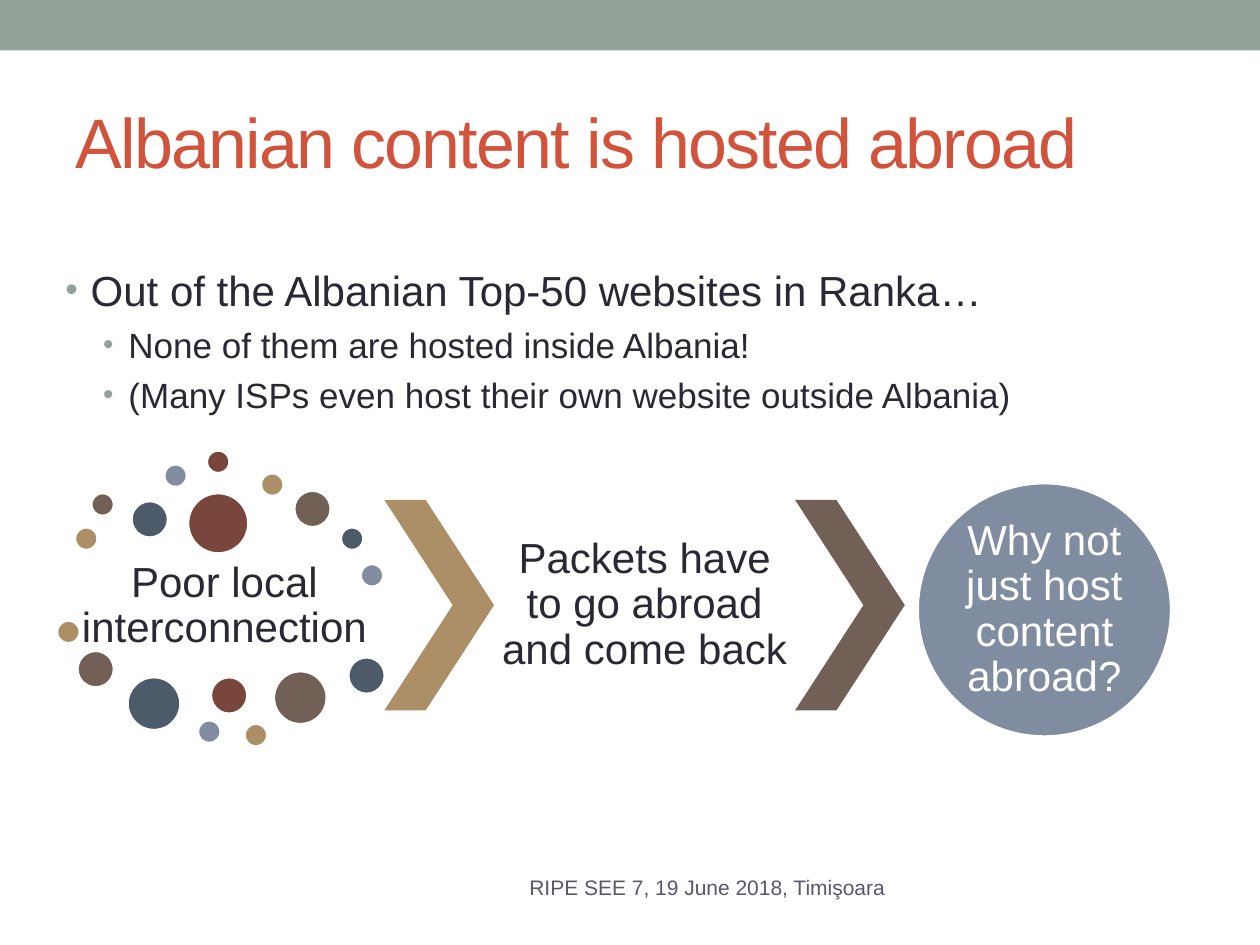
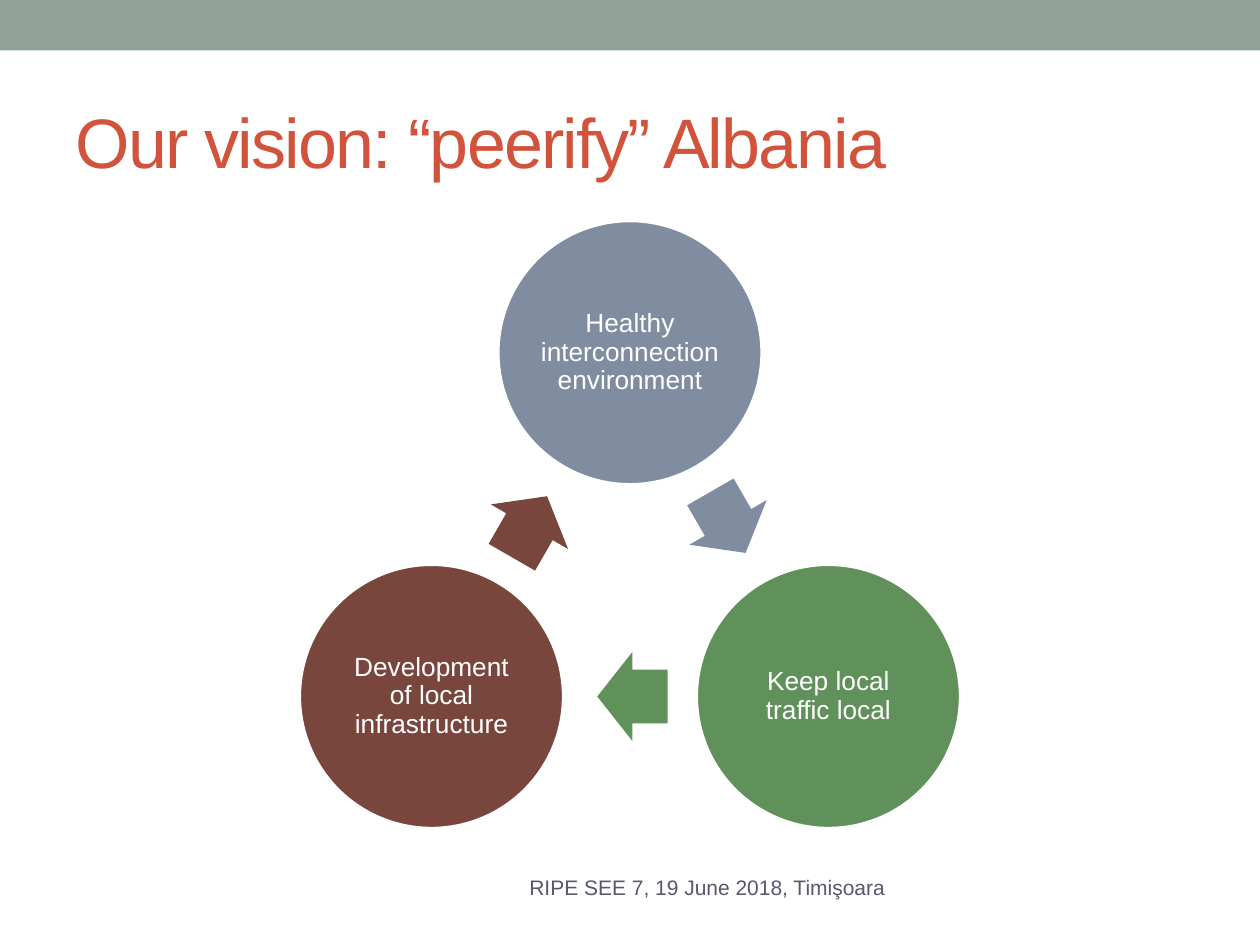
from itertools import cycle
from math import cos, radians, sin

from lxml import etree
from pptx import Presentation
from pptx.dml.color import RGBColor
from pptx.enum.shapes import MSO_SHAPE
from pptx.enum.text import MSO_ANCHOR, PP_ALIGN
from pptx.oxml.ns import qn
from pptx.util import Cm, Pt

RECT, OVAL = MSO_SHAPE.RECTANGLE, MSO_SHAPE.OVAL
CHEVRON, ARROW = MSO_SHAPE.CHEVRON, MSO_SHAPE.RIGHT_ARROW
LEFT, CENTER = PP_ALIGN.LEFT, PP_ALIGN.CENTER
TOP, MIDDLE = MSO_ANCHOR.TOP, MSO_ANCHOR.MIDDLE

FONT = "Arial"
SAGE, RED, INK, MUTED, WHITE = "93A299", "D2533C", "292934", "57576E", "FFFFFF"
TAN, BROWN, SLATE, STEEL, MAROON = "AD8F67", "726056", "4C5A6A", "808DA0", "79463D"
GREEN = "61915A"
SLIDE_W, SLIDE_H = 25.4, 19.05
TITLE_BOX = (1.27, 1.47, 22.86, 2.74)
FOOTER_BOX = (10.16, 17.5, 8.2, 0.91)

SMALL, MEDIUM, LARGE, LARGEST = 0.48, 0.76, 1.09, 1.24
DOTS = [
    (0.36, 1.55, SMALL), (0.69, 0.86, SMALL), (1.5, 1.02, MEDIUM),
    (2.16, 0.28, SMALL), (3.02, 0, SMALL), (4.11, 0.46, SMALL),
    (4.78, 0.81, MEDIUM), (5.72, 1.55, SMALL), (6.12, 2.29, SMALL),
    (2.64, 0.86, LARGEST), (0, 3.43, SMALL), (0.41, 4.04, MEDIUM),
    (1.42, 4.57, LARGE), (2.84, 5.44, SMALL), (3.1, 4.57, MEDIUM),
    (3.78, 5.51, SMALL), (4.37, 4.45, LARGE), (5.87, 4.17, MEDIUM),
]


def colour(value):
    """Turn a hex string into a colour."""
    return RGBColor.from_string(value)


def format_text(paragraph, text, size=24, ink=INK, align=LEFT, line=None, before=0, tracking=None):
    """Write formatted text into a paragraph."""
    paragraph.alignment = align
    paragraph.space_before = Pt(before)
    if line:
        paragraph.line_spacing = line
    run = paragraph.add_run()
    run.text = text
    run.font.name, run.font.size = FONT, Pt(size)
    run.font.color.rgb = colour(ink)
    if tracking:
        run.font._element.set("spc", str(tracking * 100))


def prepare_frame(frame, inset, anchor):
    """Make a text frame wrap, with equal insets."""
    frame.word_wrap = True
    frame.vertical_anchor = anchor
    frame.margin_left = frame.margin_right = Cm(inset)
    frame.margin_top = frame.margin_bottom = Cm(inset)


def add_text(slide, box, text, inset=0.08, anchor=MIDDLE, **style):
    """Add a text box holding one paragraph."""
    frame = slide.shapes.add_textbox(*map(Cm, box)).text_frame
    prepare_frame(frame, inset, anchor)
    format_text(frame.paragraphs[0], text, **style)


def add_figure(slide, kind, box, fill, outline=None, adjust=(), turn=0):
    """Add a flat preset shape."""
    figure = slide.shapes.add_shape(kind, *map(Cm, box))
    figure.shadow.inherit = False
    figure.fill.solid()
    figure.fill.fore_color.rgb = colour(fill)
    if outline:
        figure.line.color.rgb = colour(outline)
        figure.line.width = Pt(2.08)
    else:
        figure.line.fill.background()
    for index, value in enumerate(adjust):
        figure.adjustments[index] = value
    figure.rotation = turn
    return figure


def add_circle(slide, left, top, diameter, fill, text="", size=24, inset=0):
    """Add a white-rimmed circle, with a label if given."""
    circle = add_figure(slide, OVAL, (left, top, diameter, diameter), fill, outline=WHITE)
    if text:
        prepare_frame(circle.text_frame, inset, MIDDLE)
        format_text(circle.text_frame.paragraphs[0], text, size=size, ink=WHITE, align=CENTER, line=0.9)


def add_bullets(slide, box, items):
    """Add a bulleted list of (level, size, text) items."""
    frame = slide.shapes.add_textbox(*map(Cm, box)).text_frame
    prepare_frame(frame, 0.25, TOP)
    for index, (level, size, text) in enumerate(items):
        paragraph = frame.add_paragraph() if index else frame.paragraphs[0]
        paragraph.level = level
        properties = paragraph._p.get_or_add_pPr()
        properties.set("marL", str(Cm(0.51 + 0.76 * level)))
        properties.set("indent", str(Cm(-0.51)))
        bullet_colour = etree.SubElement(properties, qn("a:buClr"))
        etree.SubElement(bullet_colour, qn("a:srgbClr"), val=SAGE)
        etree.SubElement(properties, qn("a:buSzPct"), val="85000")
        etree.SubElement(properties, qn("a:buFont"), typeface=FONT)
        etree.SubElement(properties, qn("a:buChar"), char="•")
        format_text(paragraph, text, size=size, before=4.8 if index else 0)


def add_slide(deck, title):
    """Add a slide with the shared band, footer and title."""
    slide = deck.slides.add_slide(deck.slide_layouts[5])
    add_figure(slide, RECT, (0, 0, SLIDE_W, 1.02), SAGE)
    add_text(slide, FOOTER_BOX, "RIPE SEE 7, 19 June 2018, Timişoara",
             inset=0.13, anchor=TOP, size=12, ink=MUTED, align=CENTER)
    heading = slide.shapes.title
    heading.left, heading.top, heading.width, heading.height = map(Cm, TITLE_BOX)
    prepare_frame(heading.text_frame, 0.25, MIDDLE)
    format_text(heading.text_frame.paragraphs[0], title, size=40, ink=RED, tracking=-1)
    return slide


def add_dot_cluster(slide, left, top, text):
    """Draw a label surrounded by dots."""
    add_text(slide, (left + 0.36, top + 2.16, 6.05, 1.98), text, align=CENTER, line=0.9)
    for (x, y, diameter), fill in zip(DOTS, cycle([TAN, BROWN, SLATE, STEEL, MAROON])):
        add_circle(slide, left + x, top + y, diameter, fill)


def add_flow(slide, left, top, cause, effect, question):
    """Draw the flow from the dot cluster to the closing question."""
    add_dot_cluster(slide, left, top, cause)
    chevron_w, chevron_h, step = 2.21, 4.24, 8.28
    first, row = left + 6.61, top + 1.01
    for index, fill in enumerate([TAN, BROWN]):
        add_figure(slide, CHEVRON, (first + index * step, row, chevron_w, chevron_h), fill, adjust=[0.623])
    add_text(slide, (first + chevron_w, row, step - chevron_w, chevron_h), effect, align=CENTER, line=0.9)
    add_circle(slide, left + 17.35, top + 0.66, 5.13, STEEL, question)


def add_cycle(slide, centre_x, centre_y, radius, stages):
    """Draw stages clockwise on a ring, with an arrow after each."""
    diameter, arrow_w, arrow_h, setback = 5.33, 1.42, 1.8, 0.05
    turn_step = 360 / len(stages)
    midway = radius * cos(radians(turn_step / 2))
    for index, (text, fill) in enumerate(stages):
        angle = radians(index * turn_step - 90)
        add_circle(slide, centre_x + radius * cos(angle) - diameter / 2,
                   centre_y + radius * sin(angle) - diameter / 2,
                   diameter, fill, text, size=15, inset=0.05)
        turn = (index + 0.5) * turn_step
        outward, heading = radians(turn - 90), radians(turn)
        x = centre_x + midway * cos(outward) - setback * cos(heading)
        y = centre_y + midway * sin(outward) - setback * sin(heading)
        add_figure(slide, ARROW, (x - arrow_w / 2, y - arrow_h / 2, arrow_w, arrow_h),
                   fill, adjust=[0.6, 0.5], turn=turn)


def main():
    """Build and save the deck."""
    deck = Presentation()
    deck.slide_width, deck.slide_height = Cm(SLIDE_W), Cm(SLIDE_H)

    hosting = add_slide(deck, "Albanian content is hosted abroad")
    add_flow(hosting, 1.14, 9.07, "Poor local interconnection",
             "Packets have to go abroad and come back", "Why not just host content abroad?")
    add_bullets(hosting, (1.07, 5.08, 22.86, 3.61), [
        (0, 24, "Out of the Albanian Top-50 websites in Ranka…"),
        (1, 20, "None of them are hosted inside Albania!"),
        (1, 20, "(Many ISPs even host their own website outside Albania)"),
    ])

    vision = add_slide(deck, "Our vision: “peerify” Albania")
    add_cycle(vision, 12.7, 11.73, 4.62, [
        ("Healthy interconnection environment", STEEL),
        ("Keep local traffic local", GREEN),
        ("Development of local infrastructure", MAROON),
    ])
    deck.save("out.pptx")


if __name__ == "__main__":
    main()
